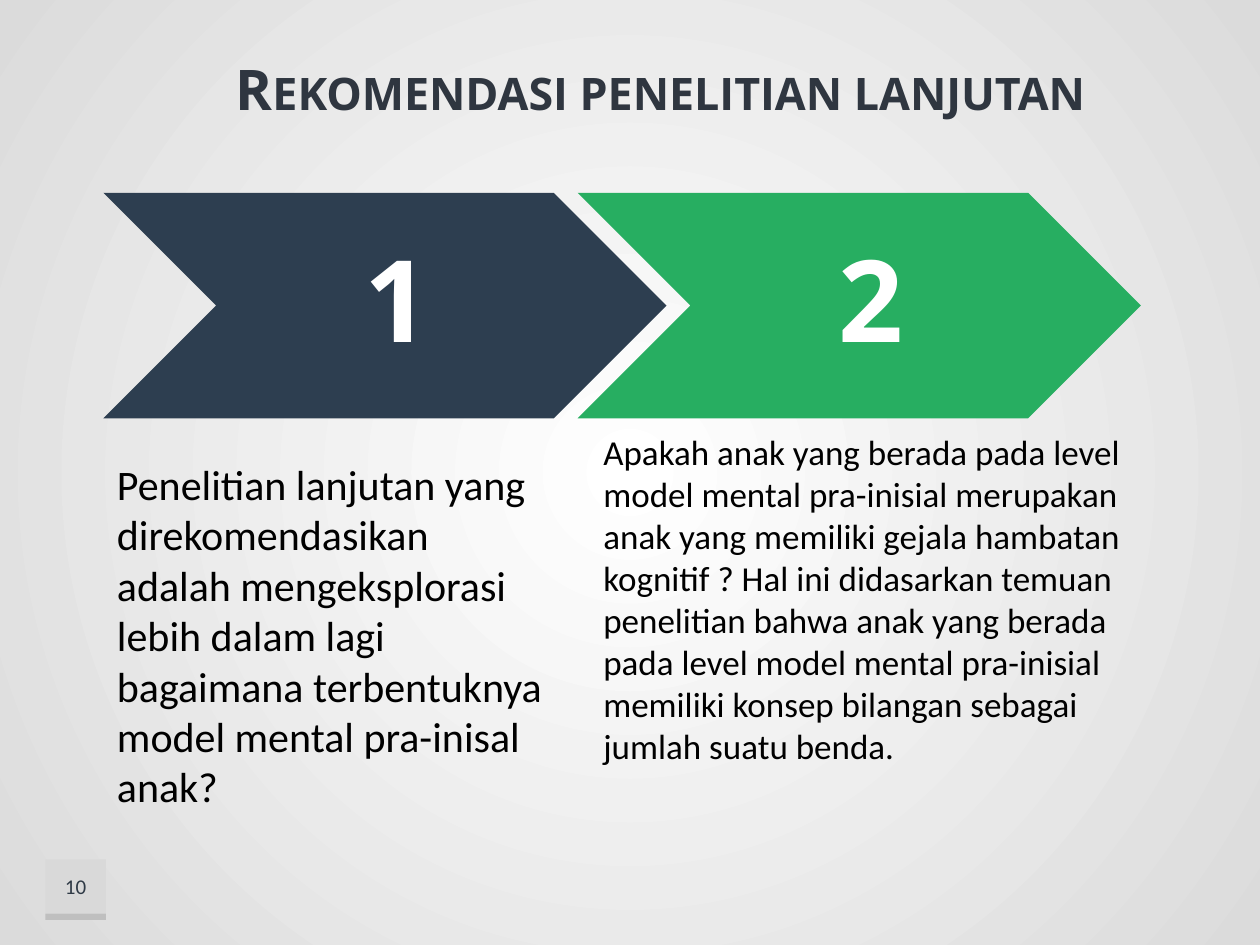
from dataclasses import dataclass

import lxml.etree
import pptx
import pptx.dml.color
import pptx.enum.shapes
import pptx.enum.text
import pptx.oxml.ns
import pptx.util

Shape = pptx.enum.shapes.MSO_SHAPE
Align = pptx.enum.text.PP_ALIGN
Anchor = pptx.enum.text.MSO_ANCHOR
CELL = pptx.util.Inches(0.1)  # grid of 100 columns by 75 rows
COLS, ROWS = 100, 75


@dataclass(frozen=True)
class Theme:
    navy: str = "2D3E50"
    green: str = "27AE61"
    white: str = "FFFFFF"
    edge: str = "DBDBDB"
    title: str = "2F3640"
    page: str = "2F3A46"
    black: str = "000000"
    tile: str = "D9D9D9"
    strip: str = "BFBFBF"
    head: str = "Open Sans"
    body: str = "Calibri"
    title_pt: int = 32
    step_pt: int = 65
    page_pt: int = 12


@dataclass(frozen=True)
class Box:
    """A place on the grid, in columns and rows."""
    col: float
    row: float
    wide: float
    high: float

    def emu(self) -> list[int]:
        return [round(n * CELL) for n in (self.col, self.row, self.wide, self.high)]


@dataclass(frozen=True)
class Type:
    face: str
    size: int
    color: str
    bold: bool = False
    align: Align = Align.LEFT


@dataclass(frozen=True)
class Step:
    label: str
    fill: str
    text: str
    size: int
    box: Box


THEME = Theme()
ARROW = Box(8.2, 15.3, 44.7, 17.9)
PITCH = 37.65
TILE = Box(3.6, 68.2, 4.8, 4.3)

STEPS = [
    Step("1", THEME.navy,
         "Penelitian lanjutan yang direkomendasikan adalah mengeksplorasi lebih "
         "dalam lagi bagaimana terbentuknya model mental pra-inisal anak?",
         24, Box(8.3, 35.9, 36.2, 29.3)),
    Step("2", THEME.green,
         "Apakah anak yang berada pada level model mental pra-inisial merupakan "
         "anak yang memiliki gejala hambatan kognitif ? Hal ini didasarkan temuan "
         "penelitian bahwa anak yang berada pada level model mental pra-inisial "
         "memiliki konsep bilangan sebagai jumlah suatu benda.",
         20, Box(46.9, 33.7, 43.3, 27.9)),
]


def rgb(code: str) -> pptx.dml.color.RGBColor:
    return pptx.dml.color.RGBColor.from_string(code)


def write(shape, text: str, style: Type, anchor: Anchor = Anchor.MIDDLE):
    frame = shape.text_frame
    frame.word_wrap = True
    frame.vertical_anchor = anchor
    para = frame.paragraphs[0]
    para.text = text
    para.alignment = style.align
    font = para.font
    font.name, font.size, font.bold = style.face, pptx.util.Pt(style.size), style.bold
    font.color.rgb = rgb(style.color)
    return para


def label(slide, box: Box, text: str, style: Type, anchor: Anchor = Anchor.MIDDLE):
    return write(slide.shapes.add_textbox(*box.emu()), text, style, anchor)


def block(slide, kind: Shape, box: Box, fill: str):
    shape = slide.shapes.add_shape(kind, *box.emu())
    shape.shadow.inherit = False
    shape.fill.solid()
    shape.fill.fore_color.rgb = rgb(fill)
    shape.line.fill.background()
    return shape


def glow(slide) -> None:
    """Fill the background with a round gradient, light in the middle."""
    fill = slide.background.fill
    fill.gradient()
    for stop, color, place in zip(fill.gradient_stops, (THEME.white, THEME.edge), (0, 1)):
        stop.color.rgb = rgb(color)
        stop.position = place
    qn = pptx.oxml.ns.qn
    grad = next(slide.background._cSld.iter(qn("a:gradFill")))
    grad.remove(grad.find(qn("a:lin")))
    ring = lxml.etree.SubElement(grad, qn("a:path"), path="circle")
    lxml.etree.SubElement(ring, qn("a:fillToRect"),
                          dict.fromkeys("ltrb", "50000"))


def arrow(slide, index: int, step: Step) -> None:
    box = Box(ARROW.col + index * PITCH, ARROW.row, ARROW.wide, ARROW.high)
    shape = block(slide, Shape.CHEVRON, box, step.fill)
    style = Type(THEME.head, THEME.step_pt, THEME.white, True, Align.CENTER)
    write(shape, step.label, style).line_spacing = 0.9
    frame = shape.text_frame
    frame.margin_left = pptx.util.Inches(0.28)
    frame.margin_right = pptx.util.Inches(0.09)


def main() -> None:
    deck = pptx.Presentation()
    deck.slide_width, deck.slide_height = COLS * CELL, ROWS * CELL
    slide = deck.slides.add_slide(deck.slide_layouts[6])
    glow(slide)

    block(slide, Shape.RECTANGLE, TILE, THEME.tile)
    strip = Box(TILE.col, TILE.row + TILE.high, TILE.wide, 0.5)
    block(slide, Shape.RECTANGLE, strip, THEME.strip)
    label(slide, TILE, "10",
          Type(THEME.body, THEME.page_pt, THEME.page, align=Align.CENTER))

    title = label(slide, Box(15.4, 3.6, 74, 6.8), "Rekomendasi penelitian lanjutan",
                  Type(THEME.head, THEME.title_pt, THEME.title, True, Align.CENTER))
    title._p.pPr.find(pptx.oxml.ns.qn("a:defRPr")).set("cap", "small")

    for index, step in enumerate(STEPS):
        arrow(slide, index, step)
        label(slide, step.box, step.text,
              Type(THEME.body, step.size, THEME.black), Anchor.TOP)

    deck.save("out.pptx")


if __name__ == "__main__":
    main()
